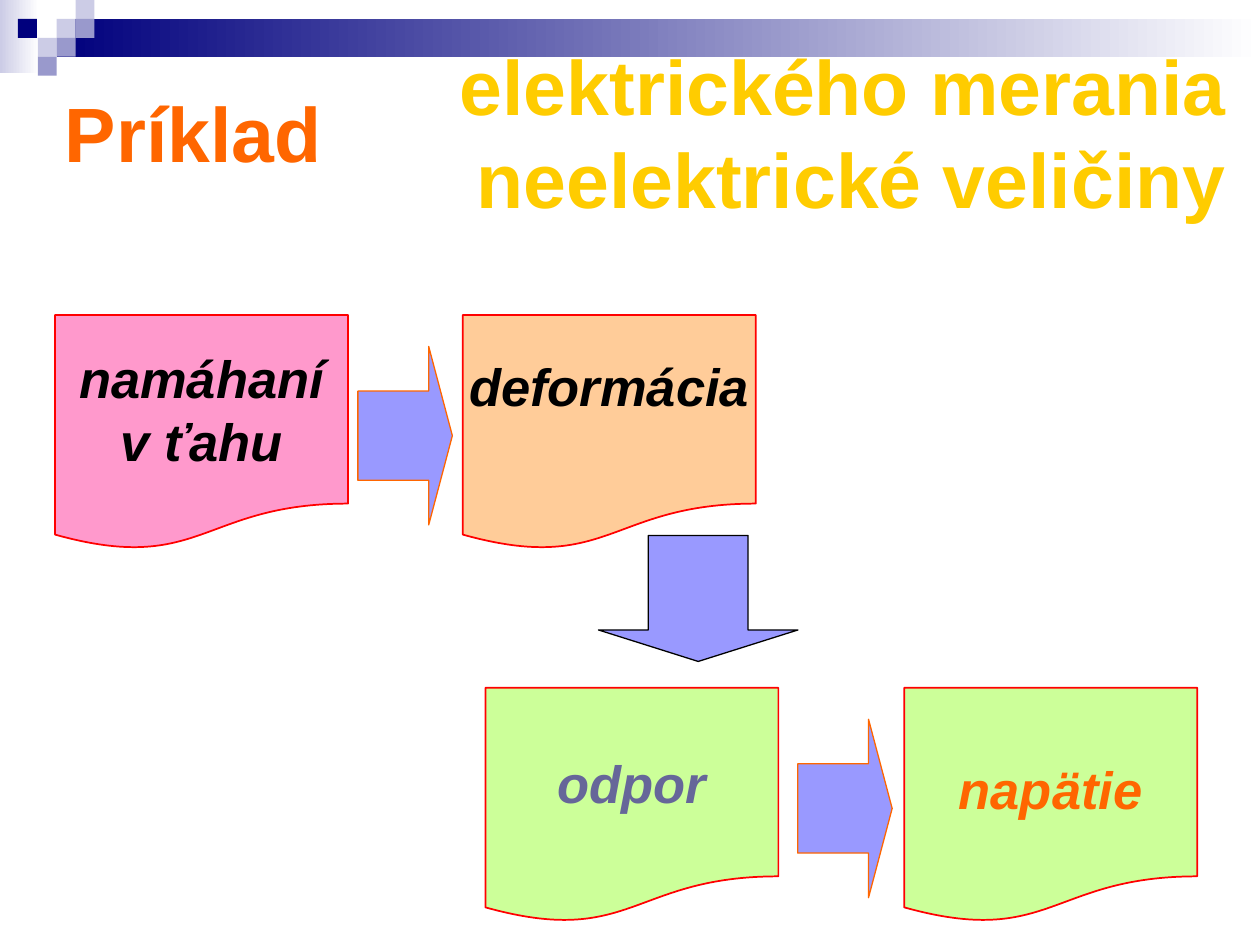
"""Build a slide showing the chain of an electrical measurement of a non-electrical quantity."""
from pptx import Presentation
from pptx.dml.color import RGBColor
from pptx.enum import shapes, text
from pptx.util import Pt

COLOURS = {
    "navy": "00007D", "lavender": "CCCCE6", "slate": "9999CC", "white": "FFFFFF",
    "arrow": "9999FF", "orange": "FF6600", "red": "FF0000", "black": "000000",
    "pink": "FF99CC", "peach": "FFCC99", "green": "CCFF99", "grey": "666699", "gold": "FFCC00",
}
KINDS = shapes.MSO_SHAPE


def colour(name):
    return RGBColor.from_string(COLOURS[name])


def add_figure(kind, left, top, width, height, fill, line=None, weight=0.75):
    shape = slide.shapes.add_shape(kind, Pt(left), Pt(top), Pt(width), Pt(height))
    shape.shadow.inherit = False
    shape.fill.solid()
    shape.fill.fore_color.rgb = colour(fill)
    if line:
        shape.line.color.rgb = colour(line)
        shape.line.width = Pt(weight)
    else:
        shape.line.fill.background()
    return shape


presentation = Presentation()
presentation.slide_width, presentation.slide_height = Pt(720), Pt(540)
slide = presentation.slides.add_slide(presentation.slide_layouts[6])

for left, top, width, height, start in [
    (0, 0, 22.3, 41.8, "lavender"),
    (32.4, 10.8, 687.6, 21.6, "navy"),
]:
    band = add_figure(KINDS.RECTANGLE, left, top, width, height, start)
    band.fill.gradient()
    band.fill.gradient_angle = 0
    for stop, name in zip(band.fill.gradient_stops, (start, "white")):
        stop.color.rgb = colour(name)

SQUARE = 10.8
for column, row, fill in [
    (3, 1, "lavender"), (4, 0, "lavender"), (4, 1, "slate"), (2, 2, "lavender"),
    (0.95, 1, "navy"), (3, 2, "slate"), (2, 3, "slate"),
]:
    add_figure(KINDS.RECTANGLE, column * SQUARE, row * SQUARE, SQUARE, SQUARE, fill)

for kind, left, top, width, height, line in [
    (KINDS.RIGHT_ARROW, 204.5, 198, 54, 102, "orange"),
    (KINDS.RIGHT_ARROW, 455.8, 411, 54, 102, "orange"),
    (KINDS.DOWN_ARROW, 342, 306, 114, 72, "black"),
]:
    arrow = add_figure(kind, left, top, width, height, "arrow", line)
    arrow.adjustments[0] = 0.5
    arrow.adjustments[1] = 0.25

for words, left, top, fill, ink, inset_top, inset_bottom in [
    ("namáhaní\nv ťahu", 31.5, 180, "pink", "black", 3.6, 3.6),
    ("deformácia", 264.5, 180, "peach", "black", 3.6, 31.2),
    ("odpor", 277.4, 393, "green", "grey", 3.6, 3.6),
    ("napätie", 516.7, 393, "green", "orange", 10.5, 3.6),
]:
    document = add_figure(KINDS.FLOWCHART_DOCUMENT, left, top, 167.4, 134.4, fill, "red", 1)
    frame = document.text_frame
    frame.word_wrap = False
    frame.vertical_anchor = text.MSO_ANCHOR.MIDDLE
    frame.margin_top, frame.margin_bottom = Pt(inset_top), Pt(inset_bottom)
    frame.text = words
    for paragraph in frame.paragraphs:
        paragraph.alignment = text.PP_ALIGN.CENTER
        paragraph.font.name = "Arial"
        paragraph.font.size = Pt(30)
        paragraph.font.bold = paragraph.font.italic = True
        paragraph.font.color.rgb = colour(ink)

for words, left, width, ink, alignment in [
    ("Príklad", 30, 229, "orange", text.PP_ALIGN.LEFT),
    ("elektrického merania\vneelektrické veličiny", 228, 480, "gold", text.PP_ALIGN.RIGHT),
]:
    title = slide.shapes.add_textbox(Pt(left), Pt(30), Pt(width), Pt(90))
    frame = title.text_frame
    frame.word_wrap = True
    frame.vertical_anchor = text.MSO_ANCHOR.MIDDLE
    paragraph = frame.paragraphs[0]
    paragraph.text = words
    paragraph.alignment = alignment
    paragraph.font.name = "Arial"
    paragraph.font.size = Pt(44)
    paragraph.font.bold = True
    paragraph.font.color.rgb = colour(ink)

presentation.save("out.pptx")
